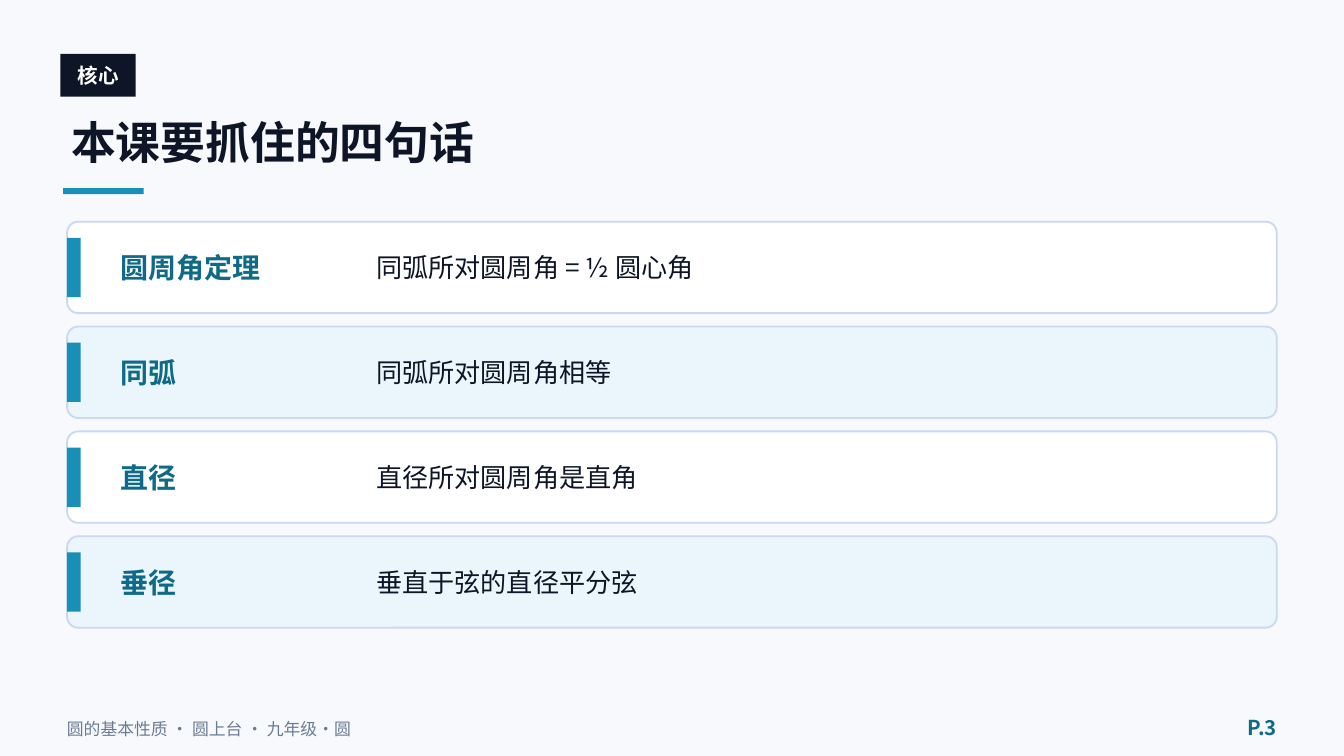
from dataclasses import dataclass

from lxml import etree
from pptx import Presentation
from pptx.dml.color import RGBColor
from pptx.enum.shapes import MSO_SHAPE
from pptx.enum.text import MSO_ANCHOR, PP_ALIGN
from pptx.oxml.ns import qn
from pptx.util import Pt

RECT, ROUNDED = MSO_SHAPE.RECTANGLE, MSO_SHAPE.ROUNDED_RECTANGLE
LEFT, CENTER, RIGHT = PP_ALIGN.LEFT, PP_ALIGN.CENTER, PP_ALIGN.RIGHT
MIDDLE = MSO_ANCHOR.MIDDLE


@dataclass(frozen=True)
class Theme:
    font: str = "Noto Sans CJK SC"
    page: str = "F7F9FC"
    ink: str = "0D1526"
    white: str = "FFFFFF"
    tint: str = "EAF6FB"
    accent: str = "1A8FB5"
    term: str = "0F6A88"
    border: str = "CBD8F2"
    muted: str = "6A7C95"
    title_size: float = 24
    term_size: float = 15
    body_size: float = 14
    label_size: float = 11
    footer_size: float = 9


THEME = Theme()

POINTS = [
    ("圆周角定理", "同弧所对圆周角 = ½ 圆心角"),
    ("同弧", "同弧所对圆周角相等"),
    ("直径", "直径所对圆周角是直角"),
    ("垂径", "垂直于弦的直径平分弦"),
]


def add_box(slide, left, top, width, height, fill, kind=RECT, border=None):
    box = slide.shapes.add_shape(kind, Pt(left), Pt(top), Pt(width), Pt(height))
    box.shadow.inherit = False
    box.fill.solid()
    box.fill.fore_color.rgb = RGBColor.from_string(fill)
    if border:
        box.line.color.rgb = RGBColor.from_string(border)
        box.line.width = Pt(1)
    else:
        box.line.fill.background()
    return box


def add_text(slide, text, left, top, width, height, *, size, color,
             bold=False, align=LEFT):
    frame = slide.shapes.add_textbox(
        Pt(left), Pt(top), Pt(width), Pt(height)).text_frame
    frame.word_wrap = True
    frame.vertical_anchor = MIDDLE
    paragraph = frame.paragraphs[0]
    paragraph.alignment = align
    run = paragraph.add_run()
    run.text = text
    run.font.size = Pt(size)
    run.font.bold = bold
    run.font.color.rgb = RGBColor.from_string(color)
    run.font.name = THEME.font
    # Chinese characters take their font from a:ea
    east_asian = etree.SubElement(run.font._element, qn("a:ea")) \
        if hasattr(run.font, "_element") else \
        etree.SubElement(run._r.get_or_add_rPr(), qn("a:ea"))
    east_asian.set("typeface", THEME.font)


def add_header(slide, left, top, width):
    # Section tag
    add_box(slide, left, top, 40.3, 23, THEME.ink)
    add_text(slide, "核心", left, top - 0.5, 40.3, 24, size=THEME.label_size,
             color=THEME.white, bold=True, align=CENTER)
    # Title and its underline
    add_text(slide, "本课要抓住的四句话", left - 1.4, top + 27.4, width, 39.6,
             size=THEME.title_size, color=THEME.ink, bold=True)
    add_box(slide, left + 1.4, top + 72, 43.2, 3.2, THEME.accent)


def add_point(slide, term, statement, left, top, width, height, fill):
    card = add_box(slide, left, top, width, height, fill, ROUNDED, THEME.border)
    card.adjustments[0] = 0.12
    bar_inset = 8.6
    add_box(slide, left, top + bar_inset, 7.2, height - 2 * bar_inset, THEME.accent)
    add_text(slide, term, left + 21.6, top, 129.6, height,
             size=THEME.term_size, color=THEME.term, bold=True)
    add_text(slide, statement, left + 158.4, top, 468, height,
             size=THEME.body_size, color=THEME.ink)


def add_points(slide, left, top, width, height, gap=7.2):
    row_height = (height - gap * (len(POINTS) - 1)) / len(POINTS)
    for row, (term, statement) in enumerate(POINTS):
        add_point(slide, term, statement, left, top + row * (row_height + gap),
                  width, row_height, THEME.tint if row % 2 else THEME.white)


def add_footer(slide, left, top, width, height):
    page_width = 43.2
    add_text(slide, "圆的基本性质 · 圆上台 · 九年级·圆", left, top, 518.4, height,
             size=THEME.footer_size, color=THEME.muted)
    add_text(slide, "P.3", left + width - page_width, top - 0.7, page_width, height,
             size=THEME.label_size, color=THEME.term, bold=True, align=RIGHT)


def main():
    deck = Presentation()
    deck.slide_width, deck.slide_height = Pt(720), Pt(405)
    slide = deck.slides.add_slide(deck.slide_layouts[6])
    slide.background.fill.solid()
    slide.background.fill.fore_color.rgb = RGBColor.from_string(THEME.page)

    add_header(slide, 32.4, 28.8, 648)
    add_points(slide, 36, 118.8, 648, 217.5)
    add_footer(slide, 28.8, 380, 662.4, 20.5)
    deck.save("out.pptx")


if __name__ == "__main__":
    main()
